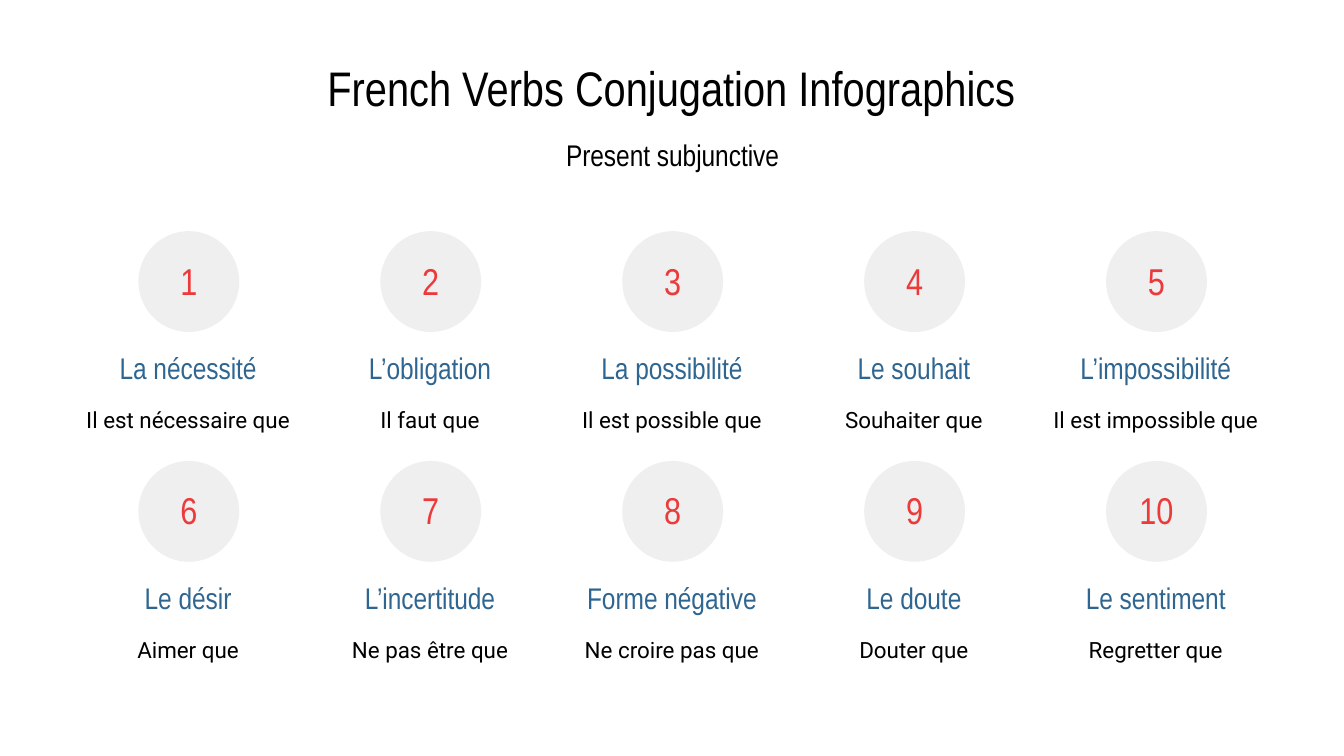
from dataclasses import dataclass

from pptx import Presentation
from pptx.dml.color import RGBColor
from pptx.enum.shapes import MSO_SHAPE
from pptx.enum.text import MSO_ANCHOR, PP_ALIGN
from pptx.util import Emu, Pt

EMU_PER_PX = 4572


@dataclass(frozen=True)
class Theme:
    """Colours, fonts and type sizes of the slide."""
    ink: str = "000000"
    heading: str = "2F6691"
    number: str = "EC3A3B"
    disc: str = "EFEFEF"
    background: str = "FFFFFF"
    display_font: str = "Arial Narrow"
    body_font: str = "Roboto"
    title_size: int = 26
    number_size: int = 20
    heading_size: int = 16
    body_size: int = 12


THEME = Theme()

CARDS = [
    ("La nécessité", "Il est nécessaire que"),
    ("L’obligation", "Il faut que"),
    ("La possibilité", "Il est possible que"),
    ("Le souhait", "Souhaiter que"),
    ("L’impossibilité", "Il est impossible que"),
    ("Le désir", "Aimer que"),
    ("L’incertitude", "Ne pas être que"),
    ("Forme négative", "Ne croire pas que"),
    ("Le doute", "Douter que"),
    ("Le sentiment", "Regretter que"),
]


def px(*lengths):
    """Turn pixel lengths into EMU."""
    return [Emu(length * EMU_PER_PX) for length in lengths]


def add_text(shapes, text, box, *, size, color=THEME.ink,
             font=THEME.display_font, anchor=MSO_ANCHOR.MIDDLE):
    """Add a centred, wrapping text box."""
    frame = shapes.add_textbox(*px(*box)).text_frame
    frame.word_wrap = True
    frame.vertical_anchor = anchor
    (frame.margin_left, frame.margin_top,
     frame.margin_right, frame.margin_bottom) = px(20, 20, 20, 20)
    paragraph = frame.paragraphs[0]
    paragraph.alignment = PP_ALIGN.CENTER
    run = paragraph.add_run()
    run.text = text
    run.font.size = Pt(size)
    run.font.name = font
    run.font.color.rgb = RGBColor.from_string(color)


def add_header(slide, box):
    """Place the title and the subtitle below it."""
    left, top, width, height = box
    title_height = 103
    add_text(slide.shapes, "French Verbs Conjugation Infographics",
             (left, top, width, title_height),
             size=THEME.title_size, anchor=MSO_ANCHOR.BOTTOM)
    add_text(slide.shapes, "Present subjunctive",
             (left + 353, top + title_height, 1096, height - title_height),
             size=THEME.heading_size)


def add_card(slide, box, number, heading, phrase):
    """Place a numbered disc with a heading and a phrase under it."""
    left, top, width, height = box
    line_height = 74
    disc = slide.shapes.add_shape(MSO_SHAPE.OVAL,
                                  *px(left + 106, top, 150, 150))
    disc.shadow.inherit = False
    disc.fill.solid()
    disc.fill.fore_color.rgb = RGBColor.from_string(THEME.disc)
    disc.line.fill.background()
    shapes = slide.shapes.add_group_shape().shapes
    add_text(shapes, phrase,
             (left, top + height - line_height, width, line_height),
             size=THEME.body_size, font=THEME.body_font, anchor=MSO_ANCHOR.TOP)
    add_text(shapes, heading,
             (left, top + height - 2 * line_height, width, line_height),
             size=THEME.heading_size, color=THEME.heading)
    add_text(shapes, str(number), (left + 118, top + 26, 126, 94),
             size=THEME.number_size, color=THEME.number)


def add_card_grid(slide, box, columns=5, row_gap=28):
    """Spread the cards over equal columns and rows."""
    left, top, width, height = box
    rows = len(CARDS) // columns
    card_width = width // columns
    card_height = (height - row_gap * (rows - 1)) // rows
    for index, (heading, phrase) in enumerate(CARDS):
        row, column = divmod(index, columns)
        card_box = (left + column * card_width,
                    top + row * (card_height + row_gap),
                    card_width, card_height)
        add_card(slide, card_box, index + 1, heading, phrase)


def main():
    """Build and save the presentation."""
    presentation = Presentation()
    presentation.slide_width, presentation.slide_height = px(2000, 1125)
    slide = presentation.slides.add_slide(presentation.slide_layouts[6])
    slide.background.fill.solid()
    slide.background.fill.fore_color.rgb = RGBColor.from_string(THEME.background)
    add_header(slide, (100, 90, 1800, 177))
    add_card_grid(slide, (100, 344, 1800, 656))
    presentation.save("out.pptx")


if __name__ == "__main__":
    main()
